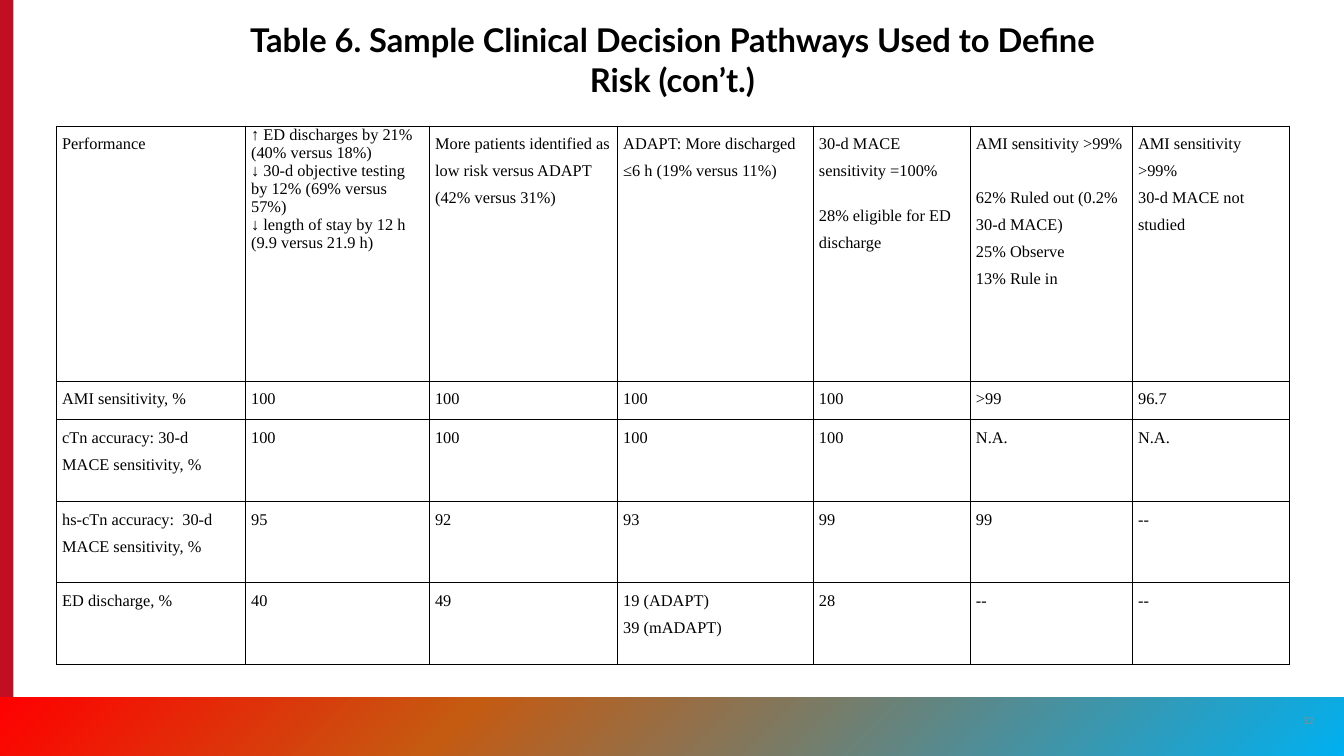
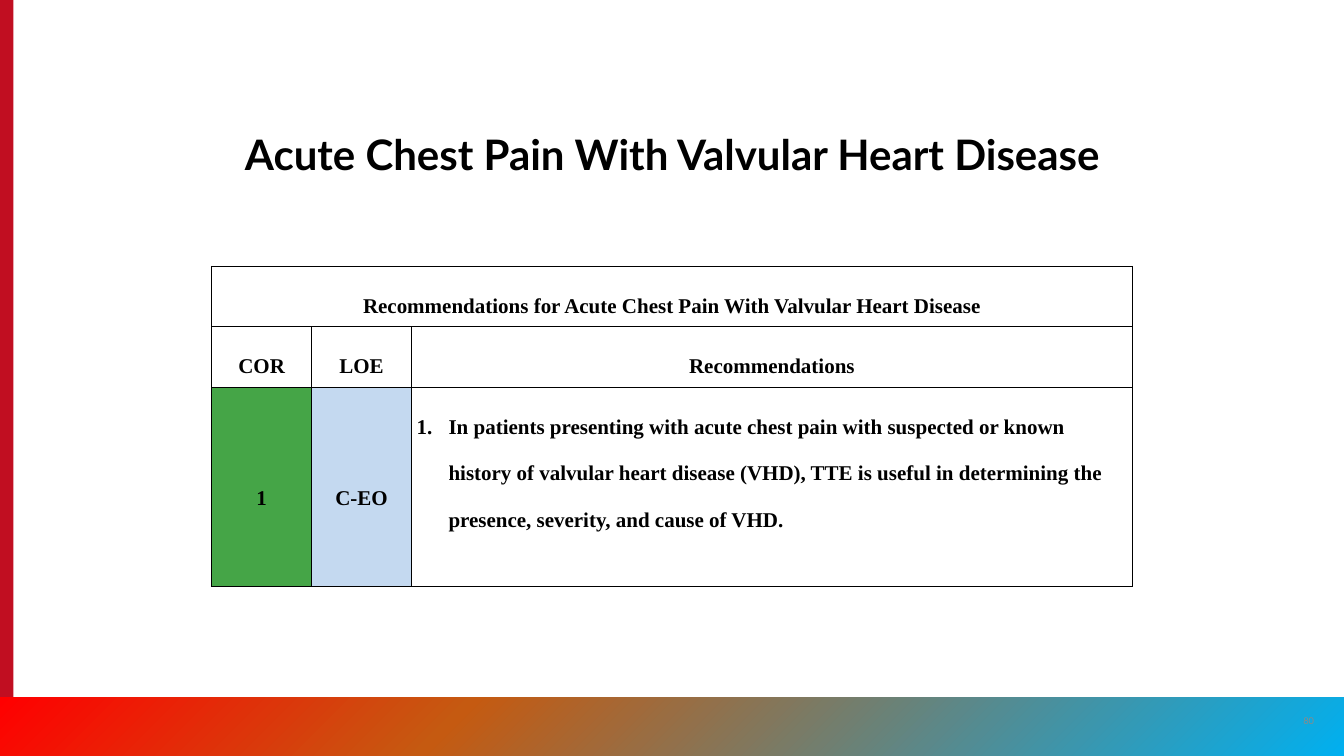
from copy import deepcopy
from dataclasses import dataclass, field

from lxml.etree import SubElement
from pptx import Presentation
from pptx.dml.color import RGBColor
from pptx.enum.shapes import MSO_SHAPE as SHAPE
from pptx.enum.text import MSO_ANCHOR as ANCHOR, PP_ALIGN as ALIGN
from pptx.oxml.ns import qn
from pptx.util import Inches, Pt


@dataclass(frozen=True)
class Theme:
    ink: str = "000000"
    bar: str = "C10E21"
    number: str = "8A8B8A"
    cor_green: str = "45A547"
    loe_blue: str = "C4D9F0"
    band: tuple = ((0, "00B0F0"), (0.66, "C55A11"), (1, "FF0000"))
    head_font: str = "Lato"
    body_font: str = "Times New Roman"
    title_small: int = 28
    title_large: int = 36
    table_small: int = 14
    table_large: int = 18
    number_size: int = 8
    border: float = 1


@dataclass
class Cell:
    text: str
    align: ALIGN = ALIGN.CENTER
    spacing: float = 1.5
    gaps: dict = field(default_factory=dict)
    fill: str = ""
    anchor: ANCHOR = ANCHOR.TOP
    numbered: bool = False


def apply(obj, **fmt):
    for name, value in fmt.items():
        setattr(obj, name, value)


def inches(*values):
    return [Inches(v) for v in values]


class Deck:
    def __init__(self, theme):
        self.t = theme
        self.prs = Presentation()
        apply(self.prs, slide_width=Inches(16), slide_height=Inches(9))
        self.s = None

    def slide(self, number):
        self.s = self.prs.slides.add_slide(self.prs.slide_layouts[6])
        bar = self.rect(0, 0, 0.16, 9)
        bar.fill.solid()
        bar.fill.fore_color.rgb = RGBColor.from_string(self.t.bar)
        self.band()
        self.text(number, (15.34, 8.34, 0.48, 0.48), ANCHOR.MIDDLE,
                  size=self.t.number_size, color=self.t.number)

    def rect(self, *box):
        sp = self.s.shapes.add_shape(SHAPE.RECTANGLE, *inches(*box))
        sp.shadow.inherit = False
        sp.line.fill.background()
        return sp

    def band(self):
        sp = self.rect(0, 8.3, 16, 0.7)
        sp.rotation = 180
        sp.fill.gradient()
        sp.fill.gradient_angle = 315
        gs_list = next(sp._element.iter(qn("a:gsLst")))
        gs_list.append(deepcopy(gs_list[0]))
        for stop, (position, color) in zip(sp.fill.gradient_stops, self.t.band):
            stop.position = position
            stop.color.rgb = RGBColor.from_string(color)

    def run(self, p, text, size, font, color, bold=False):
        r = p.add_run()
        r.text = text
        apply(r.font, size=Pt(size), name=font, bold=bold)
        r.font.color.rgb = RGBColor.from_string(color)

    def text(self, text, box, anchor=ANCHOR.TOP, size=28, color="000000", bold=False):
        tf = self.s.shapes.add_textbox(*inches(*box)).text_frame
        apply(tf, word_wrap=True, vertical_anchor=anchor)
        p = tf.paragraphs[0]
        p.alignment = ALIGN.CENTER
        self.run(p, text, size, self.t.head_font, color, bold)

    def title(self, text, box, size):
        self.text(text, box, size=size, color=self.t.ink, bold=True)

    def table(self, left, top, cols, rows, cells, size, margins, bold=False):
        frame = self.s.shapes.add_table(
            len(rows), len(cols), *inches(left, top, sum(cols), sum(rows)))
        tbl = frame.table
        apply(tbl, first_row=False, horz_banding=False)
        for col, width in zip(tbl.columns, cols):
            col.width = Inches(width)
        for row, height in zip(tbl.rows, rows):
            row.height = Inches(height)
        for r, line in enumerate(cells):
            for c, cell in enumerate(line):
                self.cell(tbl.cell(r, c), cell, size, margins, bold)
        return tbl

    def cell(self, tc, cell, size, margins, bold):
        side, edge = inches(*margins)
        apply(tc, margin_left=side, margin_right=side, margin_top=edge,
              margin_bottom=edge, vertical_anchor=cell.anchor)
        self.borders(tc)
        if cell.fill:
            tc.fill.solid()
            tc.fill.fore_color.rgb = RGBColor.from_string(cell.fill)
        else:
            tc.fill.background()
        if not cell.text:
            return
        tf = tc.text_frame
        for i, text in enumerate(cell.text.split("\n")):
            p = tf.add_paragraph() if i else tf.paragraphs[0]
            apply(p, alignment=cell.align, line_spacing=cell.spacing)
            if i in cell.gaps:
                p.space_before = Pt(cell.gaps[i])
            if cell.numbered:
                self.number(p)
            self.run(p, text, size, self.t.body_font, self.t.ink, bold)

    def number(self, p):
        pPr = p._p.get_or_add_pPr()
        pPr.set("marL", str(Inches(0.38)))
        pPr.set("indent", str(-Inches(0.38)))
        SubElement(pPr, qn("a:buAutoNum"), type="arabicPeriod")

    def borders(self, tc):
        tcPr = tc._tc.get_or_add_tcPr()
        for side in ("L", "R", "T", "B"):
            ln = SubElement(tcPr, qn(f"a:ln{side}"), w=str(Pt(self.t.border)))
            fill = SubElement(ln, qn("a:solidFill"))
            SubElement(fill, qn("a:srgbClr"), val=self.t.ink)


PERFORMANCE = [
    ["Performance",
     "↑ ED discharges by 21% (40% versus 18%)\n"
     "↓ 30-d objective testing by 12% (69% versus 57%)\n"
     "↓ length of stay by 12 h (9.9 versus 21.9 h)",
     "More patients identified as low risk versus ADAPT (42% versus 31%)",
     "ADAPT: More discharged ≤6 h (19% versus 11%)",
     "30-d MACE sensitivity =100%\n28% eligible for ED discharge",
     "AMI sensitivity >99%\n62% Ruled out (0.2% 30-d MACE)\n25% Observe\n13% Rule in",
     "AMI sensitivity >99%\n30-d MACE not studied"],
    ["AMI sensitivity, %", "100", "100", "100", "100", ">99", "96.7"],
    ["cTn accuracy: 30-d MACE sensitivity, %", "100", "100", "100", "100", "N.A.", "N.A."],
    ["hs-cTn accuracy:  30-d MACE sensitivity, %", "95", "92", "93", "99", "99", "--"],
    ["ED discharge, %", "40", "49", "19 (ADAPT)\n39 (mADAPT)", "28", "--", "--"],
]


def pathways_slide(deck):
    t = deck.t
    deck.slide("52")
    deck.title("Table 6. Sample Clinical Decision Pathways Used to Define Risk (con’t.)",
               (2.54, 0.19, 10.93, 1.05), t.title_small)
    cells = [[Cell(text, ALIGN.JUSTIFY if bool(r) == bool(c) else ALIGN.LEFT)
              for c, text in enumerate(line)] for r, line in enumerate(PERFORMANCE)]
    cells[0][1].spacing = 1
    cells[0][4].gaps = {1: 15}
    cells[0][5].gaps = {1: 23}
    deck.table(0.67, 1.5, (2.25, 2.19, 2.24, 2.33, 1.87, 1.93, 1.87),
               (3.04, 0.46, 0.97, 0.97, 0.97), cells, t.table_small, (0.07, 0))


def valvular_slide(deck):
    t = deck.t
    deck.slide("80")
    deck.title("Acute Chest Pain With Valvular Heart Disease",
               (2.41, 1.48, 11.19, 1), t.title_large)
    cells = [
        [Cell("Recommendations for Acute Chest Pain With Valvular Heart Disease"),
         Cell(""), Cell("")],
        [Cell("COR"), Cell("LOE"), Cell("Recommendations")],
        [Cell("1", fill=t.cor_green, anchor=ANCHOR.MIDDLE),
         Cell("C-EO", fill=t.loe_blue, anchor=ANCHOR.MIDDLE),
         Cell("In patients presenting with acute chest pain with suspected or known "
              "history of valvular heart disease (VHD), TTE is useful in determining "
              "the presence, severity, and cause of VHD.", ALIGN.LEFT, numbered=True)],
    ]
    for line in cells:
        for cell in line:
            cell.spacing = 2.0
    tbl = deck.table(2.52, 3.17, (1.19, 1.19, 8.58), (0.52, 0.52, 2.37), cells,
                     t.table_large, (0.06, 0.06), bold=True)
    tbl.cell(0, 0).merge(tbl.cell(0, 2))


def main():
    deck = Deck(Theme())
    pathways_slide(deck)
    valvular_slide(deck)
    deck.prs.save("out.pptx")


if __name__ == "__main__":
    main()
